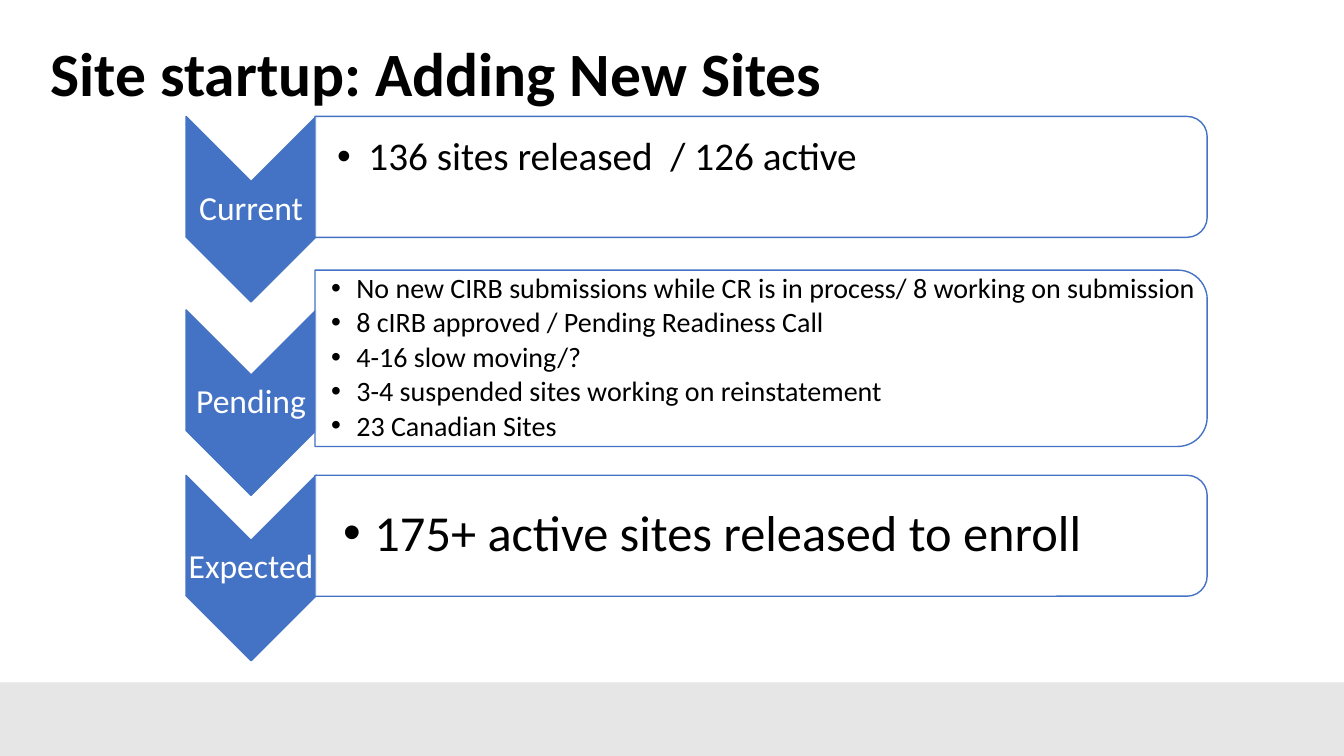
from lxml import etree
from pptx import Presentation
from pptx.dml.color import RGBColor
from pptx.enum.shapes import MSO_SHAPE
from pptx.enum.text import MSO_ANCHOR, MSO_AUTO_SIZE, PP_ALIGN
from pptx.oxml.ns import qn
from pptx.util import Inches, Pt

CHEVRON, PANEL, BAND = MSO_SHAPE.CHEVRON, MSO_SHAPE.ROUND_2_SAME_RECTANGLE, MSO_SHAPE.RECTANGLE
MIDDLE = MSO_ANCHOR.MIDDLE
FIXED_SIZE = MSO_AUTO_SIZE.NONE
LEFT, CENTER = PP_ALIGN.LEFT, PP_ALIGN.CENTER
COMPARISON_LAYOUT = 4
SLIDE_WIDTH, SLIDE_HEIGHT = Inches(13.33), Inches(7.5)

CHEVRON_LEFT, CHEVRON_WIDTH, CHEVRON_HEIGHT = 13.84, 9.68, 24.53
PANEL_LEFT, PANEL_WIDTH = 23.44, 66.38
LABEL_DROP, LABEL_HEIGHT = 8.6, 7.33
CORNER_SHARE = 0.05

STAGES = [
    dict(label="Current", chevron_top=15.4, top=15.4, height=16, size=28,
         indent=0.31, pads=(1.65, 0.15, 5.1),
         points=["136 sites released  / 126 active"]),
    dict(label="Pending", chevron_top=41, top=35.73, height=23.33, size=20,
         indent=0.25, pads=(1.2, 0.08, 0.13),
         points=["No new CIRB submissions while CR is in process/ 8 working on submission",
                 "8 cIRB approved / Pending Readiness Call",
                 "4-16 slow moving/?",
                 "3-4 suspended sites working on reinstatement",
                 "23 Canadian Sites"]),
    dict(label="Expected", chevron_top=62.87, top=62.87, height=16, size=36,
         indent=0.31, pads=(2.1, 0.2, 0.4),
         points=["175+ active sites released to enroll"]),
]


def color(code):
    return RGBColor.from_string(code)


def across(share):
    return round(SLIDE_WIDTH * share / 100)


def down(share):
    return round(SLIDE_HEIGHT * share / 100)


class StageSlide:
    """Draws the stages of site startup, with lengths in percent of the slide."""

    font, ink, paper, accent, band = "Calibri", "000000", "FFFFFF", "4472C4", "E7E6E6"

    def __init__(self, deck):
        self.slide = deck.slides.add_slide(deck.slide_layouts[COMPARISON_LAYOUT])
        self.bodies = list(self.slide.placeholders)[1:]

    def place(self, holder, left, top, width, height):
        holder.left, holder.top = across(left), down(top)
        holder.width, holder.height = across(width), down(height)

    def set_wording(self, holder, lines, size, ink, align=LEFT, bold=False, gap=0, pads=None):
        frame = holder.text_frame
        frame.text = "\n".join(lines)
        frame.word_wrap, frame.auto_size = True, FIXED_SIZE
        frame.vertical_anchor = MIDDLE
        if pads:
            left, side, bottom = pads
            frame.margin_left, frame.margin_right = across(left), across(side)
            frame.margin_top, frame.margin_bottom = down(side), down(bottom)
        for line in frame.paragraphs:
            line.alignment, line.line_spacing = align, 0.9
            line.space_before, line.space_after = Pt(0), Pt(gap)
            for run in line.runs:
                run.font.name, run.font.size = self.font, Pt(size)
                run.font.bold = bold
                run.font.color.rgb = color(ink)

    def title(self, wording):
        heading = self.slide.shapes.title
        self.place(heading, 3, 0.4, 78.75, 19.33)
        self.set_wording(heading, [wording], 44, self.ink, bold=True)

    def shape(self, preset, left, top, width, height, fill, line=None, turned=False):
        x, y, w, h = across(left), down(top), across(width), down(height)
        if turned:
            x, y, w, h = x + (w - h) // 2, y + (h - w) // 2, h, w
        drawn = self.slide.shapes.add_shape(preset, x, y, w, h)
        drawn.rotation = 90 if turned else 0
        drawn.shadow.inherit = False
        drawn.fill.solid()
        drawn.fill.fore_color.rgb = color(fill)
        if line:
            drawn.line.color.rgb = color(line)
            drawn.line.width = Pt(1)
        else:
            drawn.line.fill.background()
        return drawn

    def footer_band(self):
        self.shape(BAND, 0, 90.27, 100, 9.73, self.band)

    def step(self, label, top):
        self.shape(CHEVRON, CHEVRON_LEFT, top, CHEVRON_WIDTH, CHEVRON_HEIGHT,
                   self.accent, self.accent, turned=True)
        caption = self.slide.shapes.add_textbox(0, 0, 0, 0)
        self.place(caption, CHEVRON_LEFT, top + LABEL_DROP, CHEVRON_WIDTH, LABEL_HEIGHT)
        self.set_wording(caption, [label], 24, self.paper, CENTER, pads=(0.15, 0.15, 0.15))

    def panel(self, top, height):
        backing = self.shape(PANEL, PANEL_LEFT, top, PANEL_WIDTH, height,
                             self.paper, self.accent, turned=True)
        tint = backing.element.spPr.find(qn("a:solidFill"))[0]
        etree.SubElement(tint, qn("a:alpha"), val="90000")

    def bullets(self, points, top, height, size, indent, pads):
        listing = self.bodies.pop(0)
        self.slide.shapes.element.append(listing.element)
        inset = height * CORNER_SHARE
        self.place(listing, PANEL_LEFT, top + inset,
                   PANEL_WIDTH - inset * SLIDE_HEIGHT / SLIDE_WIDTH, height - 2 * inset)
        self.set_wording(listing, points, size, self.ink, gap=size * 0.15, pads=pads)
        for point in listing.text_frame.paragraphs:
            point.level = 1
            properties = point._p.get_or_add_pPr()
            properties.set("marL", str(Inches(indent)))
            properties.set("indent", str(-Inches(indent)))
            etree.SubElement(properties, qn("a:buFont"), typeface="Arial")
            etree.SubElement(properties, qn("a:buChar"), char="•")

    def stage(self, label, chevron_top, top, height, size, indent, pads, points):
        self.step(label, chevron_top)
        self.panel(top, height)
        self.bullets(points, top, height, size, indent, pads)

    def remove_unused(self):
        for spare in self.bodies:
            spare.element.getparent().remove(spare.element)


def main():
    deck = Presentation()
    deck.slide_width, deck.slide_height = SLIDE_WIDTH, SLIDE_HEIGHT
    startup = StageSlide(deck)
    startup.footer_band()
    startup.title("Site startup: Adding New Sites")
    for stage in STAGES:
        startup.stage(**stage)
    startup.remove_unused()
    deck.save("out.pptx")


if __name__ == "__main__":
    main()
